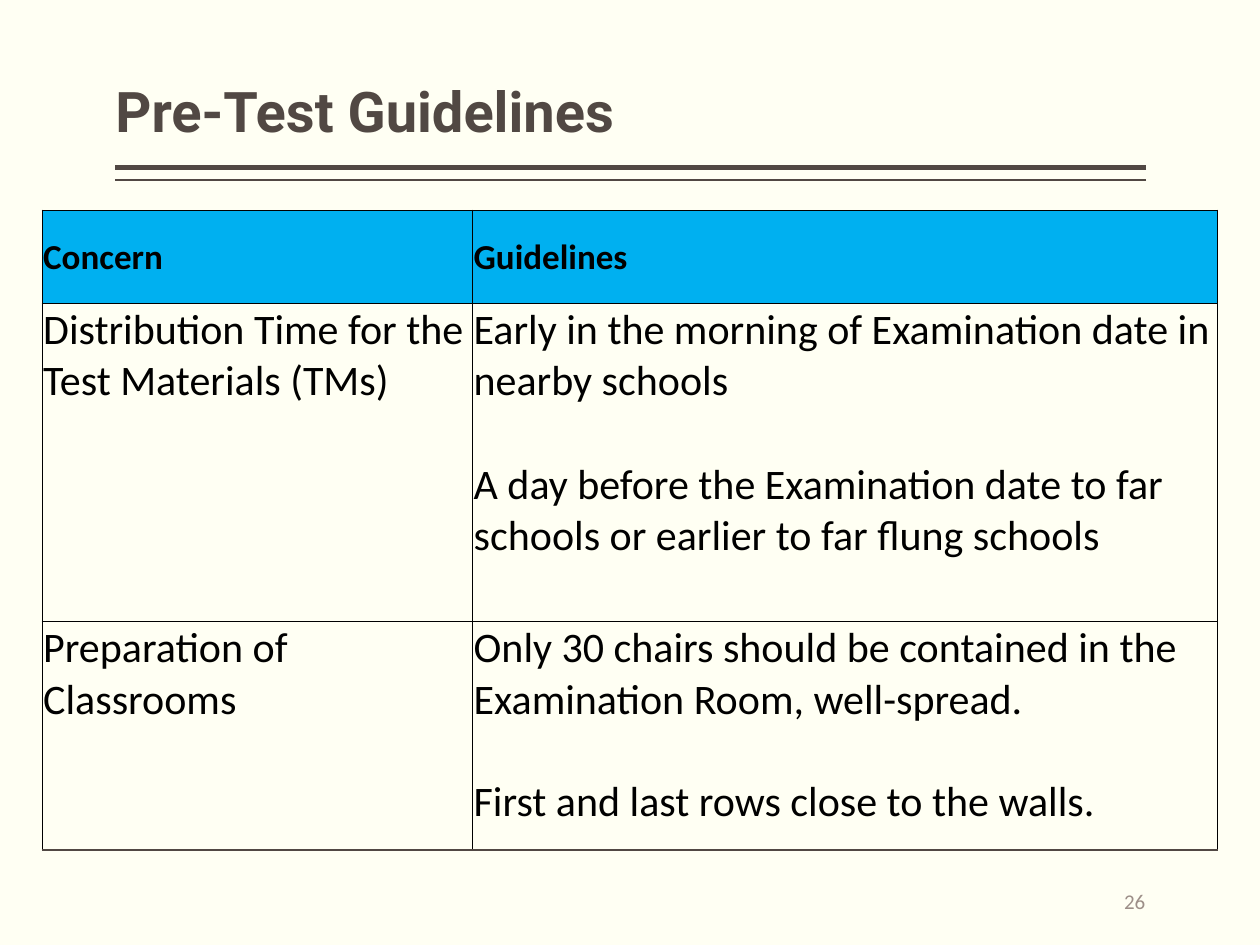
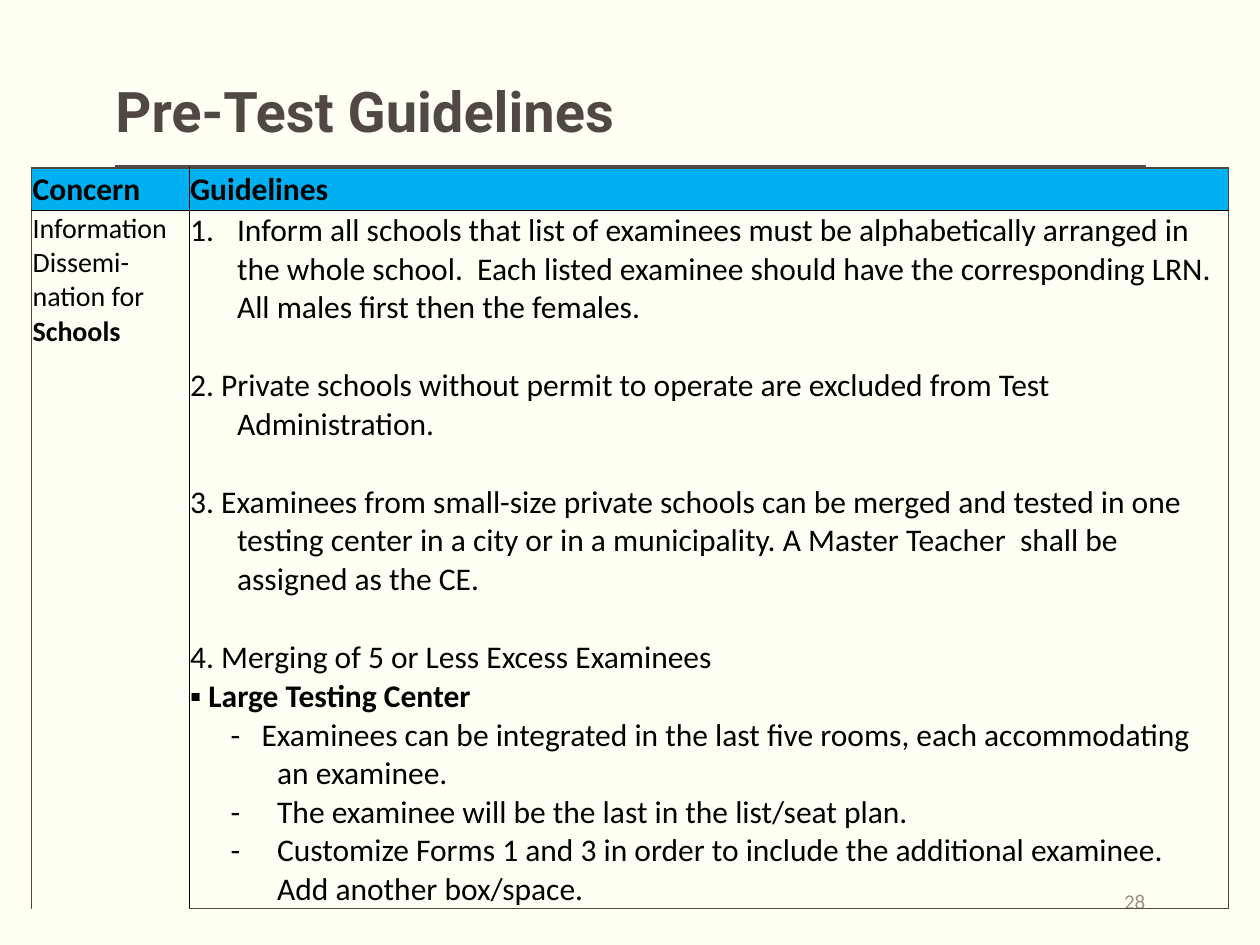
from lxml import etree
from pptx import Presentation
from pptx.dml.color import RGBColor
from pptx.enum.shapes import MSO_CONNECTOR
from pptx.enum.text import MSO_ANCHOR, PP_ALIGN
from pptx.oxml.ns import qn
from pptx.util import Pt

LINE = MSO_CONNECTOR.STRAIGHT
TOP, MIDDLE, BOTTOM = MSO_ANCHOR.TOP, MSO_ANCHOR.MIDDLE, MSO_ANCHOR.BOTTOM
LEFT, RIGHT = PP_ALIGN.LEFT, PP_ALIGN.RIGHT

COLORS = {"page": "FFFFF3", "brown": "514843", "number": "9D8F88",
          "ink": "000000", "head": "00B0F0"}
BODY, DISPLAY = "Calibri", "Roboto"
TITLE = "Pre-Test Guidelines"
HEADS = ("Concern", "Guidelines")
RULES = ((95.8, 3), (103, 1))  # y, weight
THIN, THICK = ("ink", 0.5), ("brown", 1)


def para(*runs, mark=None, left=0, hang=0, gap=0):
    """A paragraph; a run that starts with * is bold, gap is the space before."""
    return dict(runs=runs, mark=mark, left=left, hang=hang, gap=gap)


ITEM = dict(left=26.8, hang=26.8)
DASH = dict(left=49.7, hang=26.6)

# Each group is one concern with its (row height, paragraphs) guidelines.
SLIDES = [
    dict(number="26", at=(24, 120), cols=(246, 425.6), head=(53.3, 20),
         sizes=(24, 24), rim="B", groups=[
        (para("Distribution Time for the Test Materials (TMs)"), [
            (88.6, [para("Early in the morning of Examination date "
                         "in nearby schools")]),
            (93.5, [para("A day before the Examination date to far schools "
                         "or earlier to far flung schools")]),
        ]),
        (para("Preparation of Classrooms"), [
            (130.3, [para("Only 30 chairs should be contained in the "
                          "Examination Room, well-spread."),
                     para("First and last rows close to the walls.",
                          gap=29.3)]),
        ]),
    ]),
    dict(number="28", at=(18, 96), cols=(90, 594), head=(24.3, 18),
         sizes=(16, 18), rim="LRTB", groups=[
        (para("Information Dissemi-nation for ", "*Schools"), [
            (88.6, [para("Inform all schools that list of examinees must be "
                         "alphabetically arranged in the whole school.  Each "
                         "listed examinee should have the corresponding LRN. "
                         "All males first then the females.",
                         mark="1.", **ITEM)]),
            (66.6, [para("2. Private schools without permit to operate are "
                         "excluded from Test Administration.", **ITEM)]),
            (88.6, [para("3. Examinees from small-size private schools can be "
                         "merged and tested in one testing center in a city "
                         "or in a municipality. A Master Teacher  shall be "
                         "assigned as the CE.", **ITEM)]),
            (22.7, [para("4. Merging of 5 or Less Excess Examinees")]),
            (132.5, [para(" ", "*Large Testing Center", mark="▪"),
                     para("-   Examinees can be integrated in the last five "
                          "rooms, each accommodating an examinee.", **DASH),
                     para("The examinee will be the last in the list/seat "
                          "plan.", mark="-", **DASH),
                     para("Customize Forms 1 and 3 in order to include the "
                          "additional examinee.  Add another box/space.",
                          mark="-", **DASH)]),
        ]),
    ]),
]


def rgb(name):
    return RGBColor.from_string(COLORS[name])


def add_run(p, text, size, color="ink", bold=False, face=BODY):
    run = p.add_run()
    run.text = text
    font = run.font
    font.name, font.size, font.bold = face, Pt(size), bold
    font.color.rgb = rgb(color)


def add_text(slide, box, text, anchor, align, **style):
    frame = slide.shapes.add_textbox(*map(Pt, box)).text_frame
    frame.word_wrap = True
    frame.vertical_anchor = anchor
    frame.margin_left = frame.margin_right = 0
    frame.margin_top = frame.margin_bottom = Pt(3.6)
    p = frame.paragraphs[0]
    p.alignment = align
    add_run(p, text, **style)
    return p


def add_frame(slide, number):
    """Draw what all slides share: ground, rules, title, page number."""
    fill = slide.background.fill
    fill.solid()
    fill.fore_color.rgb = rgb("page")
    for y, weight in RULES:
        rule = slide.shapes.add_connector(LINE, Pt(655), Pt(y), Pt(65.5), Pt(y))
        rule.line.color.rgb = rgb("brown")
        rule.line.width = Pt(weight)
        etree.SubElement(rule._element.spPr, qn("a:effectLst"))
    p = add_text(slide, (66, 23.8, 612, 62.6), TITLE, BOTTOM, LEFT,
                 size=32, color="brown", bold=True, face=DISPLAY)
    p.line_spacing = 0.9
    add_text(slide, (546.5, 500.4, 108, 28.8), number, MIDDLE, RIGHT,
             size=12, color="number")


def fill_para(p, item, size, bold=False):
    if item["gap"]:
        p.space_before = Pt(item["gap"])
    props = p._p.get_or_add_pPr()
    props.set("marL", str(Pt(item["left"])))
    props.set("indent", str(-Pt(item["hang"])))
    mark = item["mark"]
    if mark == "1.":
        etree.SubElement(props, qn("a:buAutoNum"), type="arabicPeriod")
    elif mark:
        etree.SubElement(props, qn("a:buFont"), typeface=BODY)
        etree.SubElement(props, qn("a:buChar"), char=mark)
    else:
        etree.SubElement(props, qn("a:buNone"))
    for text in item["runs"]:
        add_run(p, text.lstrip("*"), size, bold=bold or text.startswith("*"))


def fill_cell(cell, items, size, head=False):
    cell.margin_left = cell.margin_right = cell.margin_top = Pt(0.7)
    cell.margin_bottom = 0
    cell.vertical_anchor = MIDDLE if head else TOP
    frame = cell.text_frame
    for i, item in enumerate(items):
        p = frame.add_paragraph() if i else frame.paragraphs[0]
        fill_para(p, item, size, head)


def set_edges(cell, edges):
    """Write borders in L, R, T, B order; None leaves a side bare."""
    props = cell._tc.get_or_add_tcPr()
    for i, side in enumerate("LRTB"):
        color, weight = edges[side] or ("ink", 0)
        ln = etree.Element(qn("a:ln" + side), w=str(Pt(weight)))
        if edges[side]:
            solid = etree.SubElement(ln, qn("a:solidFill"))
            etree.SubElement(solid, qn("a:srgbClr"), val=COLORS[color])
        else:
            etree.SubElement(ln, qn("a:noFill"))
        props.insert(i, ln)


def add_guide(slide, data):
    """Add the table of concerns and guidelines."""
    tall, head_size = data["head"]
    heights = [tall] + [h for _, rows in data["groups"] for h, _ in rows]
    last = len(heights) - 1
    cols = data["cols"]
    table = slide.shapes.add_table(
        len(heights), len(cols), *map(Pt, data["at"]),
        Pt(sum(cols)), Pt(sum(heights))).table
    table.first_row = table.horz_banding = False
    for col, width in zip(table.columns, cols):
        col.width = Pt(width)
    for row, height in zip(table.rows, heights):
        row.height = Pt(height)

    for c, text in enumerate(HEADS):
        fill_cell(table.cell(0, c), [para(text)], head_size, head=True)
    starts = {0, last + 1}
    r = 1
    for concern, rows in data["groups"]:
        starts.add(r)
        fill_cell(table.cell(r, 0), [concern], data["sizes"][0])
        if len(rows) > 1:
            table.cell(r, 0).merge(table.cell(r + len(rows) - 1, 0))
        for _, items in rows:
            fill_cell(table.cell(r, 1), items, data["sizes"][1])
            r += 1

    for r in range(last + 1):
        for c in range(len(cols)):
            cell = table.cell(r, c)
            if r:
                cell.fill.background()
            else:
                cell.fill.solid()
                cell.fill.fore_color.rgb = rgb("head")
            outer = {"L": c == 0, "R": c == 1, "T": r == 0, "B": r == last}
            edges = {side: THICK if out and side in data["rim"] else THIN
                     for side, out in outer.items()}
            if r not in starts:
                edges["T"] = None
            if r + 1 not in starts:
                edges["B"] = None
            set_edges(cell, edges)


def main():
    deck = Presentation()
    deck.slide_width, deck.slide_height = Pt(720), Pt(540)
    for data in SLIDES:
        slide = deck.slides.add_slide(deck.slide_layouts[6])
        add_frame(slide, data["number"])
        add_guide(slide, data)
    deck.save("out.pptx")


if __name__ == "__main__":
    main()
